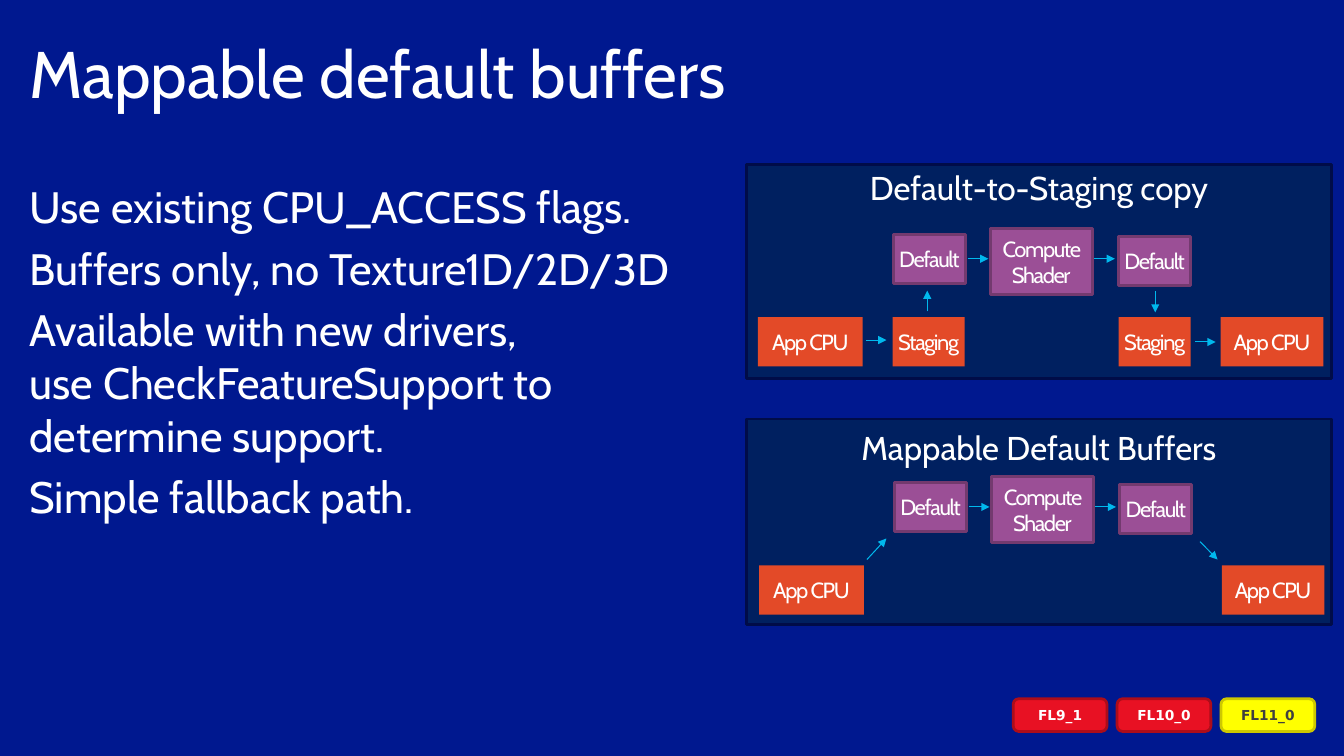
"""Build the slide on mappable default buffers."""
from dataclasses import dataclass, replace
from typing import Optional

from lxml import etree
from pptx import Presentation
from pptx import util as u
from pptx.dml.color import RGBColor
from pptx.enum import shapes, text
from pptx.oxml import ns


@dataclass(frozen=True)
class Type:
    size: float
    font: str = "Cabin"
    ink: str = "FFFFFF"
    bold: bool = False
    track: int = 0
    align: text.PP_ALIGN = text.PP_ALIGN.CENTER
    before: float = 0


@dataclass(frozen=True)
class Look:
    fill: str
    edge: Optional[str]
    type: Type
    form: shapes.MSO_SHAPE = shapes.MSO_SHAPE.RECTANGLE
    inset: float = 0


@dataclass(frozen=True)
class Box:
    x: float
    y: float
    w: float
    h: float
    look: Look
    words: str = ""


@dataclass(frozen=True)
class Arrow:
    x1: float
    y1: float
    x2: float
    y2: float


@dataclass(frozen=True)
class Panel:
    title: str
    top: float
    height: float
    head: float
    dx: float
    dy: float
    boxes: tuple[Box, ...]
    arrows: tuple[Arrow, ...]


def color(code: str) -> RGBColor:
    return RGBColor.from_string(code)


def write(frame, paras: list[str], kind: Type, inset: Optional[float] = None) -> None:
    frame.word_wrap = True
    if inset is not None:
        frame.margin_left = frame.margin_right = u.Cm(inset)
        frame.margin_top = frame.margin_bottom = u.Cm(inset)
    for i, words in enumerate(paras):
        para = frame.add_paragraph() if i else frame.paragraphs[0]
        para.alignment = kind.align
        para.space_before = u.Pt(kind.before)
        for j, line in enumerate(words.split("\n")):
            if j:
                para.add_line_break()
            run = para.add_run()
            run.text = line
            font = run.font
            font.name, font.size, font.bold = kind.font, u.Pt(kind.size), kind.bold
            font.color.rgb = color(kind.ink)
            if kind.track:
                run._r.get_or_add_rPr().set("spc", str(kind.track))


def label(tree, x: float, y: float, w: float, h: float, paras: list[str],
          kind: Type, inset: Optional[float] = None) -> None:
    area = tree.add_textbox(u.Cm(x), u.Cm(y), u.Cm(w), u.Cm(h))
    write(area.text_frame, paras, kind, inset)


def draw_box(tree, box: Box) -> None:
    look = box.look
    shape = tree.add_shape(look.form, u.Cm(box.x), u.Cm(box.y), u.Cm(box.w), u.Cm(box.h))
    shape.shadow.inherit = False
    shape.fill.solid()
    shape.fill.fore_color.rgb = color(look.fill)
    if look.edge:
        shape.line.color.rgb = color(look.edge)
        shape.line.width = u.Pt(2)
    else:
        shape.line.fill.background()
    if box.words:
        shape.text_frame.vertical_anchor = text.MSO_ANCHOR.MIDDLE
        write(shape.text_frame, [box.words], look.type, look.inset)


def draw_arrow(tree, arrow: Arrow) -> None:
    line = tree.add_connector(shapes.MSO_CONNECTOR.STRAIGHT, u.Cm(arrow.x1), u.Cm(arrow.y1),
                              u.Cm(arrow.x2), u.Cm(arrow.y2))
    line.line.color.rgb = color("00B8ED")
    line.line.width = u.Pt(0.75)
    etree.SubElement(line.line._get_or_add_ln(), ns.qn("a:tailEnd"), type="triangle")
    etree.SubElement(line._element.spPr, ns.qn("a:effectLst"))


NODE = Type(16, track=-100)
HEAD = Type(24)
BACK = Look("002060", "000C48", HEAD)
CPU = Look("E34A28", None, NODE)
GPU = Look("9B4F96", "733A6F", NODE)
TAG = Type(10, "DejaVu Sans", bold=True)
RED = Look("E81123", "AC0D1A", TAG, shapes.MSO_SHAPE.ROUNDED_RECTANGLE, 0.13)
GOLD = replace(RED, fill="FFFF00", edge="CDC800", type=replace(TAG, ink="404040"))

LEFT, WIDTH = 19.18, 15.04
CORE = (
    Box(19.48, 8.15, 2.69, 1.27, CPU, "App CPU"),
    Box(22.96, 6.02, 1.85, 1.27, GPU, "Default"),
    Box(25.45, 5.87, 2.62, 1.7, GPU, "Compute Shader"),
    Box(28.75, 6.07, 1.85, 1.27, GPU, "Default"),
    Box(31.37, 8.15, 2.64, 1.27, CPU, "App CPU"),
)
LINKS = (Arrow(24.87, 6.65, 25.4, 6.65), Arrow(28.12, 6.65, 28.65, 6.65))
PANELS = (
    Panel("Default-to-Staging copy", 4.22, 5.51, 4.19, 0, 0,
          (Box(22.94, 8.15, 1.85, 1.27, CPU, "Staging"),
           Box(28.75, 8.15, 1.85, 1.27, CPU, "Staging")),
          (Arrow(22.25, 8.74, 22.78, 8.74), Arrow(30.71, 8.79, 31.24, 8.79),
           Arrow(23.83, 8, 23.83, 7.47), Arrow(29.69, 7.49, 29.69, 8.03))),
    Panel("Mappable Default Buffers", 10.77, 5.28, 10.87, 0.03, 6.38, (),
          (Arrow(30.84, 13.92, 31.29, 14.38), Arrow(22.28, 14.38, 22.78, 13.84))),
)
POINTS = [
    "Use existing CPU_ACCESS flags.",
    "Buffers only, no Texture1D/2D/3D",
    "Available with new drivers, \nuse CheckFeatureSupport to \ndetermine support.",
    "Simple fallback path.",
]
TAGS = (("FL9_1", RED), ("FL10_0", RED), ("FL11_0", GOLD))


def draw_panel(slide, panel: Panel) -> None:
    tree = slide.shapes.add_group_shape().shapes
    dx, dy = panel.dx, panel.dy
    draw_box(tree, Box(LEFT, panel.top, WIDTH, panel.height, BACK))
    moved = tuple(replace(b, x=b.x + dx, y=b.y + dy) for b in CORE)
    for box in moved + panel.boxes:
        draw_box(tree, box)
    shared = tuple(Arrow(a.x1 + dx, a.y1 + dy, a.x2 + dx, a.y2 + dy) for a in LINKS)
    for arrow in shared + panel.arrows:
        draw_arrow(tree, arrow)
    label(tree, LEFT, panel.head, WIDTH, 1.27, [panel.title], HEAD)


def main() -> None:
    deck = Presentation()
    deck.slide_width, deck.slide_height = u.Cm(34.54), u.Cm(19.43)
    slide = deck.slides.add_slide(deck.slide_layouts[6])
    slide.background.fill.solid()
    slide.background.fill.fore_color.rgb = color("00188F")
    start = text.PP_ALIGN.LEFT
    label(slide.shapes, 0.76, 0.84, 33.02, 2.54, ["Mappable default buffers"],
          Type(48, align=start), 0)
    label(slide.shapes, 0.76, 4.62, 33.02, 13.97, POINTS,
          Type(32, align=start, before=6.4), 0)
    for i, (words, look) in enumerate(TAGS):
        draw_box(slide.shapes, Box(26.04 + i * 2.67, 17.96, 2.41, 0.84, look, words))
    for panel in PANELS:
        draw_panel(slide, panel)
    deck.save("out.pptx")


if __name__ == "__main__":
    main()
